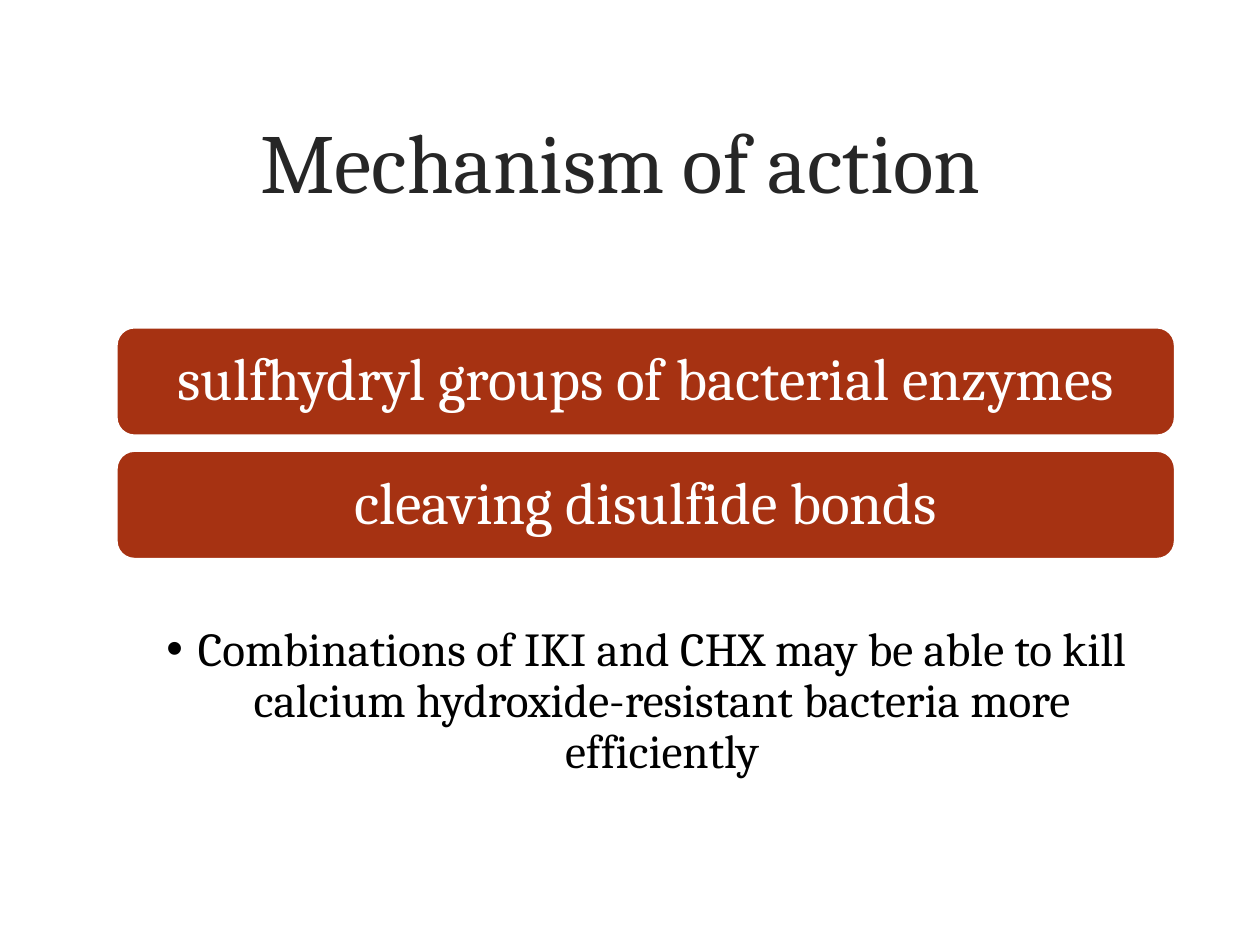
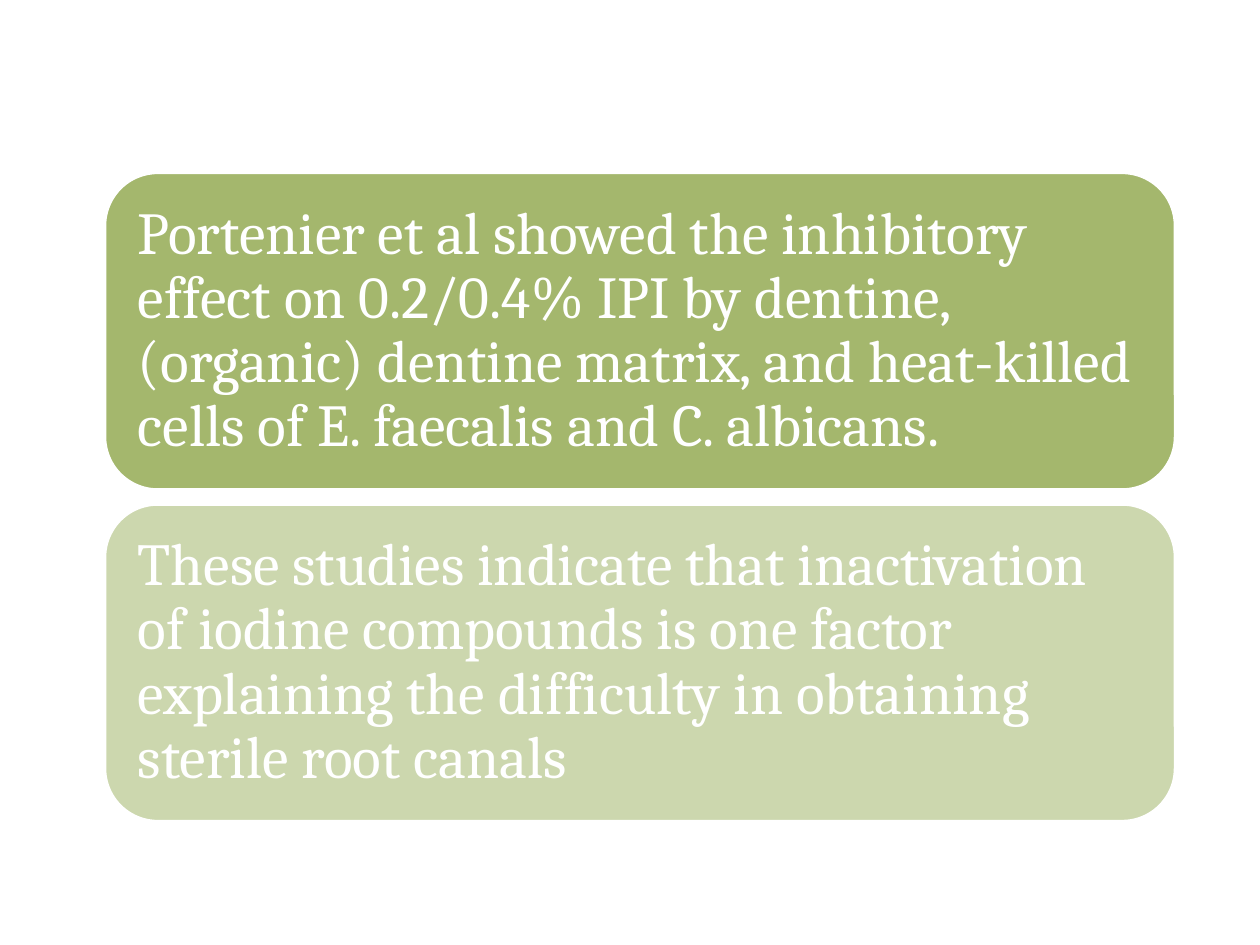
from pptx import Presentation
from pptx.dml.color import RGBColor as Rgb
from pptx.enum.shapes import MSO_SHAPE as Kind
from pptx.enum.text import MSO_ANCHOR as Anchor, PP_ALIGN as Align
from pptx.oxml.ns import qn
from pptx.util import Pt
from lxml.etree import SubElement as Sub

theme = {
    "font": "Cambria",
    "title": (48, "262626"),
    "card": (34, "FFFFFF"),
    "note": (27, "000000"),
    "rust": "A63212",
    "green": "9BB05E",
    "edge": "FFFFFF",
}


def write(shape, text, role, align, spacing, anchor, pads, bullet=False):
    frame = shape.text_frame
    left, top, right, base = map(Pt, pads)
    form = {
        "word_wrap": True,
        "vertical_anchor": anchor,
        "margin_left": left,
        "margin_top": top,
        "margin_right": right,
        "margin_bottom": base,
    }
    for name, value in form.items():
        setattr(frame, name, value)
    para = frame.paragraphs[0]
    para.text = text
    para.alignment = align
    para.line_spacing = spacing
    if bullet:
        props = para._p.get_or_add_pPr()
        props.set("marL", str(Pt(18)))
        props.set("indent", str(Pt(-18)))
        Sub(props, qn("a:buFont")).set("typeface", "Arial")
        Sub(props, qn("a:buChar")).set("char", "•")
    size, color = theme[role]
    font = para.runs[0].font
    for name, value in {"name": theme["font"], "size": Pt(size)}.items():
        setattr(font, name, value)
    font.color.rgb = Rgb.from_string(color)


def stack(slide, cards, left, top, width, height, gap, color, align):
    for row, (text, alpha) in enumerate(cards):
        y = top + row * (height + gap)
        card = slide.shapes.add_shape(
            Kind.ROUNDED_RECTANGLE, Pt(left), Pt(y), Pt(width), Pt(height))
        card.shadow.inherit = False
        card.fill.solid()
        card.fill.fore_color.rgb = Rgb.from_string(color)
        if alpha < 100:
            tint = card.fill._xPr.find(qn("a:solidFill"))[0]
            Sub(tint, qn("a:alpha")).set("val", str(alpha * 1000))
        card.line.color.rgb = Rgb.from_string(theme["edge"])
        card.line.width = Pt(1.5)
        write(card, text, "card", align, 0.9, Anchor.MIDDLE, [10] * 4)


deck = Presentation()
deck.slide_width, deck.slide_height = Pt(720), Pt(540)
blank = deck.slide_layouts[6]

action = deck.slides.add_slide(blank)
title = action.shapes.add_textbox(Pt(38), Pt(34.5), Pt(633), Pt(114))
write(title, "Mechanism of action", "title", Align.CENTER, 1,
      Anchor.MIDDLE, (7.2, 3.6, 7.2, 3.6))
steps = [
    ("sulfhydryl groups of bacterial enzymes", 100),
    ("cleaving disulfide bonds", 100),
]
stack(action, steps, 66.5, 187, 605, 62, 8.5, theme["rust"], Align.CENTER)
note = action.shapes.add_textbox(Pt(66.5), Pt(354), Pt(605), Pt(93))
write(note, "Combinations of IKI and CHX may be able to kill calcium "
      "hydroxide-resistant bacteria more efficiently", "note",
      Align.CENTER, 0.9, Anchor.TOP, (19.2, 3.6, 18.7, 3.6), True)

study = deck.slides.add_slide(blank)
facts = [
    ("Portenier et al showed the inhibitory effect on 0.2/0.4% IPI by "
     "dentine, (organic) dentine matrix, and heat-killed cells of "
     "E. faecalis and C. albicans.", 90),
    ("These studies indicate that inactivation of iodine compounds is one "
     "factor explaining the difficulty in obtaining sterile root canals", 50),
]
stack(study, facts, 60, 98.75, 611.5, 181, 8.5, theme["green"], Align.LEFT)

deck.save("out.pptx")
